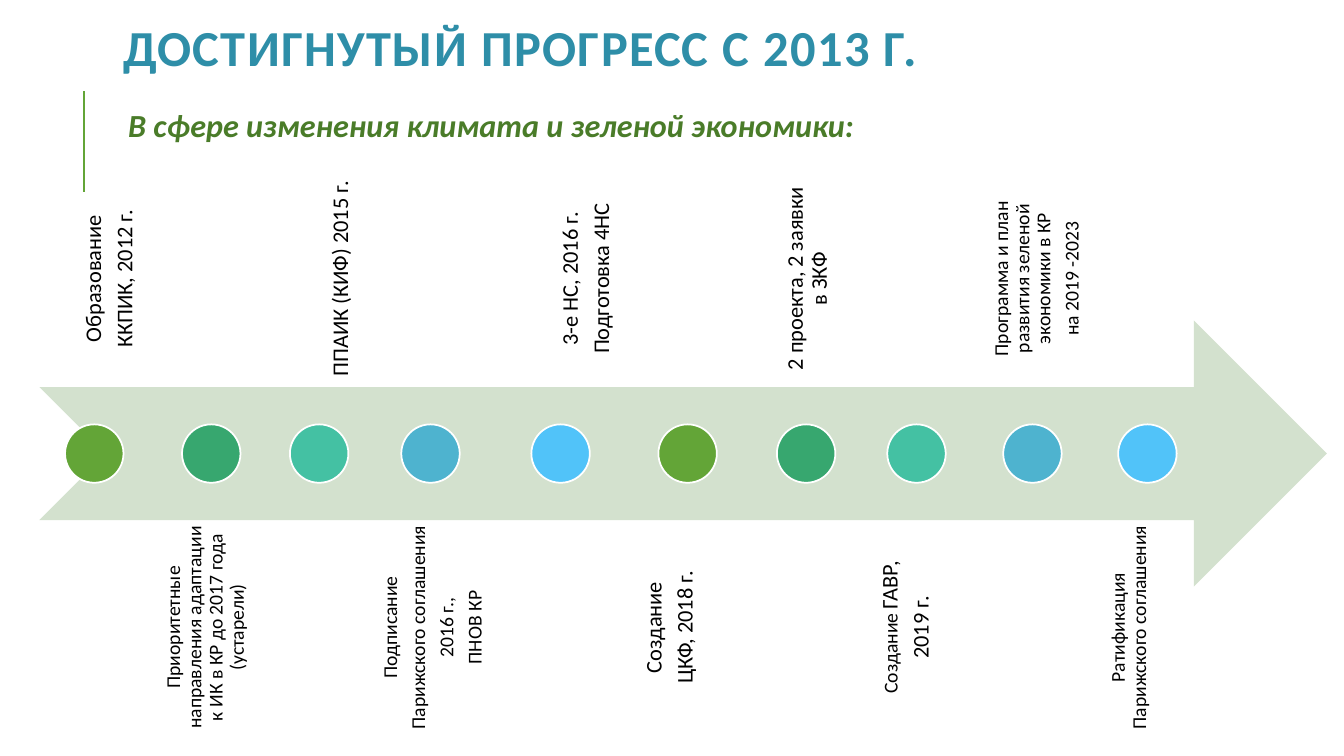
import itertools

import pptx
import pptx.dml.color
import pptx.enum.shapes
import pptx.enum.text
import pptx.oxml
import pptx.util
from pptx.util import Inches

RGBColor = pptx.dml.color.RGBColor
Anchor = pptx.enum.text.MSO_ANCHOR
Align = pptx.enum.text.PP_ALIGN
ShapeType = pptx.enum.shapes.MSO_SHAPE

FONT = "Calibri"
BLACK = RGBColor(0x00, 0x00, 0x00)
WHITE = RGBColor(0xFF, 0xFF, 0xFF)
TITLE_BLUE = RGBColor(0x2E, 0x8E, 0xA8)
SUBTITLE_GREEN = RGBColor(0x4A, 0x7C, 0x29)
ARROW_GREEN = RGBColor(0xD3, 0xE1, 0xCE)
ACCENT_GREEN = RGBColor(0x63, 0xA5, 0x37)
DOT_COLORS = [
    ACCENT_GREEN,
    RGBColor(0x37, 0xA7, 0x6F),
    RGBColor(0x44, 0xC1, 0xA3),
    RGBColor(0x4E, 0xB3, 0xCF),
    RGBColor(0x51, 0xC3, 0xF9),
]

DOT_SIZE = 0.58
DOT_TOP = 4.21
LABEL_HEIGHT = 2.31
TOP_ABOVE = 1.61
TOP_BELOW = 5.07

# Left, width, text size, paragraphs; labels alternate above and below
MILESTONES = [
    (0.39, 1.09, 16, ["Образование", "ККПИК, 2012 г."]),
    (1.51, 1.17, 14, ["Приоритетные направления адаптации к ИК в КР до 2017 года (устарели)"]),
    (2.71, 0.91, 16, ["ППАИК (КИФ) 2015 г."]),
    (3.66, 1.22, 14, ["Подписание", "Парижского соглашения", "2016 г.,", "ПНОВ КР"]),
    (4.91, 1.30, 16, ["3-е НС, 2016 г.", "Подготовка 4НС"]),
    (6.25, 1.14, 16, ["Создание", "ЦКФ, 2018 г."]),
    (7.42, 1.15, 16, ["2 проекта, 2 заявки", "в ЗКФ"]),
    (8.59, 1.00, 16, ["Создание ГАВР,", "2019 г."]),
    (9.63, 1.22, 14, ["Программа и план развития зеленой экономики в КР", "на 2019 -2023"]),
    (10.88, 1.00, 14, ["Ратификация Парижского соглашения"]),
]
PROJECTS = 6
AGENCY = 7


def place(shape, left, top, width, height):
    shape.left, shape.top = Inches(left), Inches(top)
    shape.width, shape.height = Inches(width), Inches(height)


def format_run(run, size, color, bold=False, italic=False):
    run.font.name = FONT
    run.font.size = pptx.util.Pt(size)
    run.font.color.rgb = color
    run.font.bold = bold
    run.font.italic = italic


def fill_placeholder(placeholder, text, line_spacing):
    """Set one left-aligned line and return its run."""
    frame = placeholder.text_frame
    frame.text = text
    frame.auto_size = pptx.enum.text.MSO_AUTO_SIZE.NONE
    frame.vertical_anchor = Anchor.MIDDLE
    paragraph = frame.paragraphs[0]
    paragraph.alignment = Align.LEFT
    paragraph.line_spacing = line_spacing
    paragraph.space_before = pptx.util.Pt(0)
    return paragraph.runs[0]


def add_title(slide):
    title = slide.shapes.title
    place(title, 1.12, 0.15, 11.25, 0.73)
    run = fill_placeholder(title, "ДОСТИГНУТЫЙ ПРОГРЕСС С 2013 Г.", 0.8)
    format_run(run, 36, TITLE_BLUE, bold=True)
    run.font._element.set("spc", "100")


def add_subtitle(slide):
    body = slide.placeholders[1]
    place(body, 1.12, 0.88, 11.25, 0.77)
    body.fill.solid()
    body.fill.fore_color.rgb = WHITE
    run = fill_placeholder(body, "В сфере изменения климата и зеленой экономики:", 0.9)
    format_run(run, 23, SUBTITLE_GREEN, bold=True, italic=True)
    body.text_frame.margin_left = body.text_frame.margin_right = Inches(0.15)
    # Plain line without a bullet
    properties = body.text_frame.paragraphs[0]._p.get_or_add_pPr()
    properties.set("marL", "0")
    properties.set("indent", "0")
    properties.append(pptx.oxml.parse_xml(
        '<a:buNone xmlns:a="http://schemas.openxmlformats.org/drawingml/2006/main"/>'))


def add_accent_line(slide):
    line = slide.shapes.add_connector(
        pptx.enum.shapes.MSO_CONNECTOR.STRAIGHT,
        Inches(0.83), Inches(1.9), Inches(0.83), Inches(0.9))
    line.line.color.rgb = ACCENT_GREEN
    line.line.width = pptx.util.Pt(1.5)
    line._element.spPr.append(pptx.oxml.parse_xml(
        '<a:effectLst xmlns:a="http://schemas.openxmlformats.org/drawingml/2006/main"/>'))


def add_filled_shape(slide, kind, left, top, width, height, color):
    shape = slide.shapes.add_shape(
        kind, Inches(left), Inches(top), Inches(width), Inches(height))
    shape.shadow.inherit = False
    shape.fill.solid()
    shape.fill.fore_color.rgb = color
    shape.line.fill.background()
    return shape


def add_dot(slide, center, color):
    dot = add_filled_shape(slide, ShapeType.OVAL, center - DOT_SIZE / 2, DOT_TOP,
                           DOT_SIZE, DOT_SIZE, color)
    dot.line.color.rgb = WHITE
    dot.line.width = pptx.util.Pt(1.25)


def add_label(slide, left, top, width, size, lines, anchor):
    """Add text that reads from bottom to top."""
    label = slide.shapes.add_textbox(
        Inches(left), Inches(top), Inches(width), Inches(LABEL_HEIGHT))
    frame = label.text_frame
    frame.word_wrap = True
    frame.vertical_anchor = anchor
    frame.margin_left = frame.margin_right = Inches(0.12 if size == 16 else 0.11)
    frame.margin_top = frame.margin_bottom = frame.margin_left
    frame._txBody.bodyPr.set("vert", "vert270")
    frame.text = "\n".join(lines)
    for paragraph in frame.paragraphs:
        paragraph.alignment = Align.CENTER
        paragraph.line_spacing = 0.9
        paragraph.space_after = pptx.util.Pt(5)
        format_run(paragraph.runs[0], size, BLACK)
    return label


def add_milestones(slide):
    colors = itertools.cycle(DOT_COLORS)
    for index, (left, width, size, lines) in enumerate(MILESTONES):
        above = index % 2 == 0
        top = TOP_ABOVE if above else TOP_BELOW
        anchor = Anchor.BOTTOM if above else Anchor.TOP
        if index == PROJECTS:
            anchor = Anchor.MIDDLE
        label = add_label(slide, left, top, width, size, lines, anchor)
        first = label.text_frame.paragraphs[0]
        if index == PROJECTS:
            first.line_spacing = 1.0
            first.space_after = pptx.util.Pt(0)
        elif index == AGENCY:
            # The first word is smaller than the abbreviation
            word, abbreviation = lines[0].split(" ")
            first.runs[0].text = word + " "
            first.runs[0].font.size = pptx.util.Pt(14)
            run = first.add_run()
            run.text = abbreviation
            format_run(run, size, BLACK)
        add_dot(slide, left + width / 2, next(colors))


def main():
    presentation = pptx.Presentation()
    presentation.slide_width = Inches(13.33)
    presentation.slide_height = Inches(7.5)
    slide = presentation.slides.add_slide(presentation.slide_layouts[1])

    # Heading
    add_accent_line(slide)
    add_title(slide)
    add_subtitle(slide)

    # Timeline
    add_filled_shape(slide, ShapeType.NOTCHED_RIGHT_ARROW, 0.39, 3.18, 12.77, 2.64,
                     ARROW_GREEN)
    add_milestones(slide)

    presentation.save("out.pptx")


if __name__ == "__main__":
    main()
